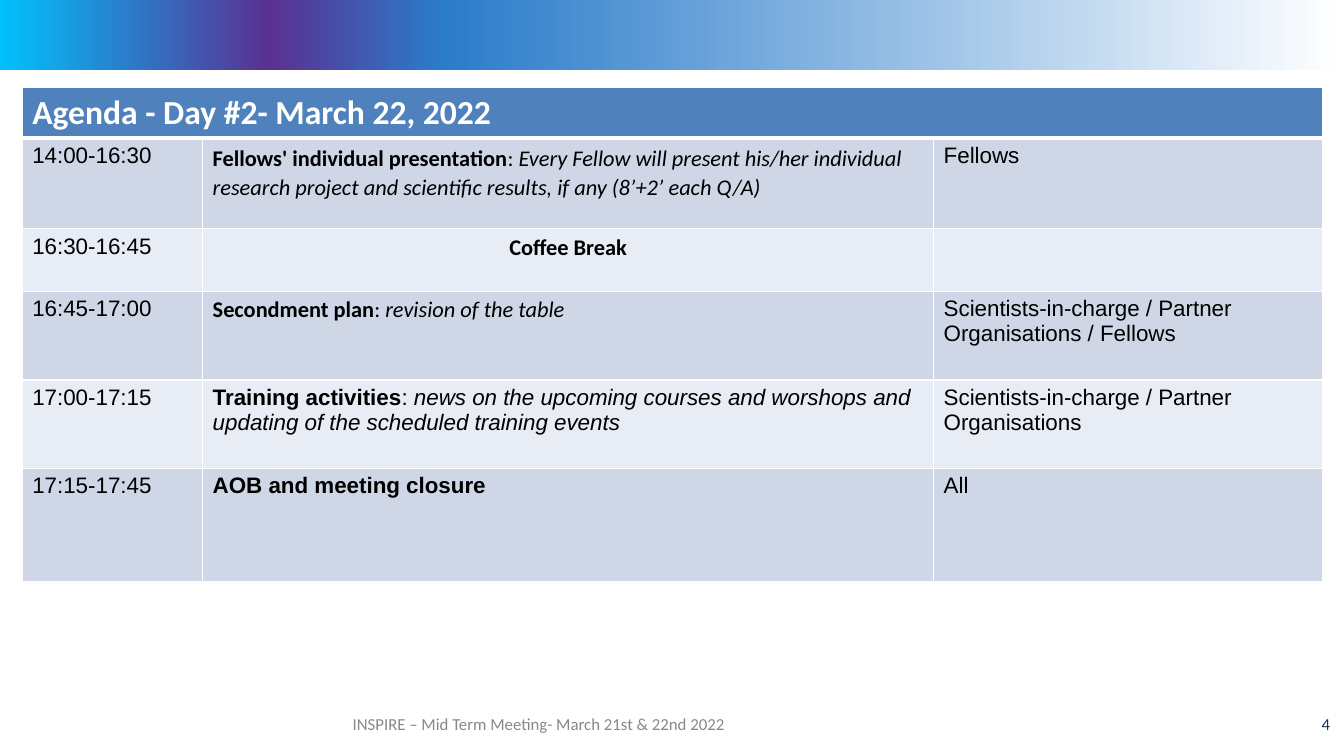
from lxml.etree import SubElement
from pptx import Presentation
from pptx.dml.color import RGBColor
from pptx.enum.shapes import MSO_SHAPE
from pptx.enum.text import MSO_ANCHOR, PP_ALIGN
from pptx.oxml.ns import qn
from pptx.util import Emu, Pt

PX = 9144  # 100 px to the inch


def paint(color, code):
    color.rgb = RGBColor.from_string(code)


def write(para, text, code, **form):
    run = para.add_run()
    run.text = text
    for name, value in form.items():
        setattr(run.font, name, value)
    paint(run.font.color, code)


deck = Presentation()
deck.slide_width, deck.slide_height = Emu(1333 * PX), Emu(750 * PX)
slide = deck.slides.add_slide(deck.slide_layouts[6])

# Gradient band along the top
band = slide.shapes.add_shape(MSO_SHAPE.RECTANGLE, 0, 0, 1333 * PX, 69 * PX)
band.shadow.inherit = False
band.line.fill.background()
band.fill.gradient()
band.fill.gradient_angle = 0
stops = band._element.spPr.find(".//" + qn("a:gsLst"))
stops.clear()
for place, code in [(0, "01C1FC"), (20, "593192"), (33, "2B7CCB"), (100, "FFFFFF")]:
    stop = SubElement(stops, qn("a:gs"), pos=str(place * 1000))
    SubElement(stop, qn("a:srgbClr"), val=code)

# Footer and page number
for left, width, text, code, align in [
    (281, 507, "INSPIRE – Mid Term Meeting- March 21st & 22nd 2022", "888888", PP_ALIGN.CENTER),
    (1281, 48, "4", "17365D", PP_ALIGN.RIGHT),
]:
    box = slide.shapes.add_textbox(left * PX, 698 * PX, width * PX, 40 * PX)
    frame = box.text_frame
    frame.word_wrap = True
    frame.vertical_anchor = MSO_ANCHOR.MIDDLE
    para = frame.paragraphs[0]
    para.alignment = align
    write(para, text, code, size=Pt(12), name="Calibri")

# Agenda: time, topic, detail, people, font of the topic
items = [
    ("14:00-16:30", "Fellows' individual presentation",
     "Every Fellow will present his/her individual research project and "
     "scientific results, if any (8’+2’ each Q/A)", "Fellows", "Calibri"),
    ("16:30-16:45", "Coffee Break", "", "", "Calibri"),
    ("16:45-17:00", "Secondment plan", "revision of the table",
     "Scientists-in-charge / Partner Organisations / Fellows", "Calibri"),
    ("17:00-17:15", "Training activities",
     "news on the upcoming courses and worshops and updating of the "
     "scheduled training events", "Scientists-in-charge / Partner Organisations", "Arial"),
    ("17:15-17:45", "AOB and meeting closure", "", "All", "Arial"),
]
wide = [179, 725, 386]
high = [49, 90, 62, 88, 88, 112]
grid = slide.shapes.add_table(len(high), len(wide), 22 * PX, 87 * PX,
                              sum(wide) * PX, sum(high) * PX).table
grid.horz_banding = False
for col, width in zip(grid.columns, wide):
    col.width = Emu(width * PX)
for row, height in zip(grid.rows, high):
    row.height = Emu(height * PX)

# Cell borders and fills
for r, row in enumerate(grid.rows):
    shade = "4F81BD" if r == 0 else "CFD7E7" if r % 2 else "E8ECF4"
    for cell in row.cells:
        props = cell._tc.get_or_add_tcPr()
        for side in "LRTB":
            thick = 3 if (r, side) in [(0, "B"), (1, "T")] else 1
            line = SubElement(props, qn("a:ln" + side), w=str(Pt(thick)))
            fill = SubElement(line, qn("a:solidFill"))
            SubElement(fill, qn("a:srgbClr"), val="FFFFFF")
        cell.fill.solid()
        paint(cell.fill.fore_color, shade)

# Header
head = grid.cell(0, 0)
head.merge(grid.cell(0, 2))
write(head.text_frame.paragraphs[0], "Agenda - Day #2- March 22, 2022", "FFFFFF",
      size=Pt(24), name="Calibri", bold=True)

# Agenda text
for r, (time, topic, detail, people, face) in enumerate(items, 1):
    first, mid, last = [grid.cell(r, c).text_frame.paragraphs[0] for c in range(3)]
    plain = dict(size=Pt(16), name="Arial", bold=False)
    mixed = dict(plain, name=face)
    write(first, time, "000000", **plain)
    write(mid, topic, "000000", **dict(mixed, bold=True))
    if detail:
        write(mid, ": ", "000000", **mixed)
        write(mid, detail, "000000", italic=True, **mixed)
    if people:
        write(last, people, "000000", **plain)
grid.cell(1, 1).text_frame.paragraphs[0].line_spacing = 1.07
grid.cell(2, 1).text_frame.paragraphs[0].alignment = PP_ALIGN.CENTER

deck.save("out.pptx")
